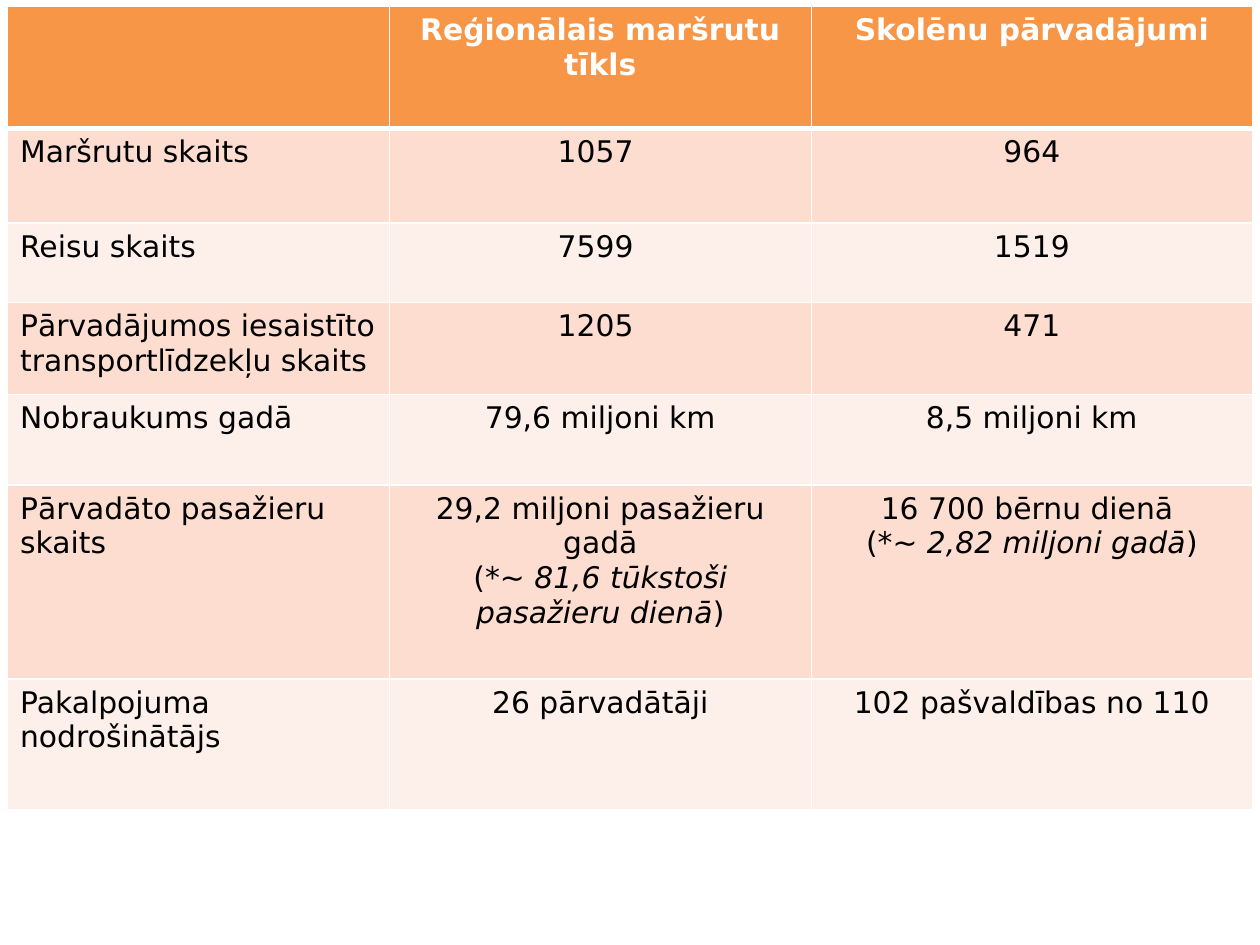
"""Builds a slide with a table comparing regional routes and school transport."""
from lxml import etree
from pptx import Presentation
from pptx.dml.color import RGBColor
from pptx.enum.text import PP_ALIGN
from pptx.oxml.ns import qn
from pptx.util import Inches, Pt

CENTER, LEFT = PP_ALIGN.CENTER, PP_ALIGN.LEFT
FONT = "DejaVu Sans"
COLORS = {"header": "F79646", "odd": "FCDDCF", "even": "FDEFE9",
          "white": "FFFFFF", "black": "000000"}
COL_WIDTHS = [3.03, 3.35, 3.5]
ROW_HEIGHTS = [0.97, 0.75, 0.63, 0.73, 0.72, 1.54, 1.04]
ROWS = [
    ["", "Reģionālais maršrutu tīkls", "Skolēnu pārvadājumi"],
    ["Maršrutu skaits", "1057 ", "964"],
    ["Reisu skaits", "7599 ", "1519"],
    ["Pārvadājumos iesaistīto transportlīdzekļu skaits", "1205 ", "471"],
    ["Nobraukums gadā", "79,6 miljoni km", "8,5 miljoni km"],
    ["Pārvadāto pasažieru skaits",
     "29,2 miljoni pasažieru gadā\n(*|~ 81,6 tūkstoši pasažieru dienā|)",
     "16 700 bērnu dienā \n(*|~ 2,82 miljoni gadā|)"],
    ["Pakalpojuma nodrošinātājs", "26 pārvadātāji", "102 pašvaldības no 110"],
]


def set_borders(cell, widths):
    """Draw white borders, given the width in points for each side."""
    tcPr = cell._tc.get_or_add_tcPr()
    for side, width in widths.items():
        ln = etree.SubElement(tcPr, qn(f"a:ln{side}"), w=str(Pt(width)))
        fill = etree.SubElement(ln, qn("a:solidFill"))
        etree.SubElement(fill, qn("a:srgbClr"), val=COLORS["white"])


def fill_text(cell, text, align, color, bold):
    """Write lines as paragraphs; text between bars is italic."""
    tf = cell.text_frame
    for i, line in enumerate(text.split("\n")):
        p = tf.add_paragraph() if i else tf.paragraphs[0]
        p.alignment = align
        p.font.size = Pt(17)
        for j, part in enumerate(line.split("|")):
            r = p.add_run()
            r.text = part
            r.font.name = FONT
            r.font.size = Pt(17)
            r.font.bold = bold
            r.font.italic = j % 2 == 1
            r.font.color.rgb = RGBColor.from_string(color)


prs = Presentation()
prs.slide_width, prs.slide_height = Inches(10), Inches(7.5)
s = prs.slides.add_slide(prs.slide_layouts[6])

table = s.shapes.add_table(
    len(ROWS), len(COL_WIDTHS), Inches(0.06), Inches(0.05),
    Inches(sum(COL_WIDTHS)), Inches(sum(ROW_HEIGHTS))).table
for col, width in zip(table.columns, COL_WIDTHS):
    col.width = Inches(width)
for row, height in zip(table.rows, ROW_HEIGHTS):
    row.height = Inches(height)

for i, texts in enumerate(ROWS):
    header = i == 0
    band = "header" if header else "odd" if i % 2 else "even"
    for j, text in enumerate(texts):
        cell = table.cell(i, j)
        set_borders(cell, {"L": 1, "R": 1, "T": 3 if i == 1 else 1,
                           "B": 3 if header else 1})
        cell.fill.solid()
        cell.fill.fore_color.rgb = RGBColor.from_string(COLORS[band])
        if text:
            fill_text(cell, text, CENTER if j else LEFT,
                      COLORS["white" if header else "black"], header)

prs.save("out.pptx")
